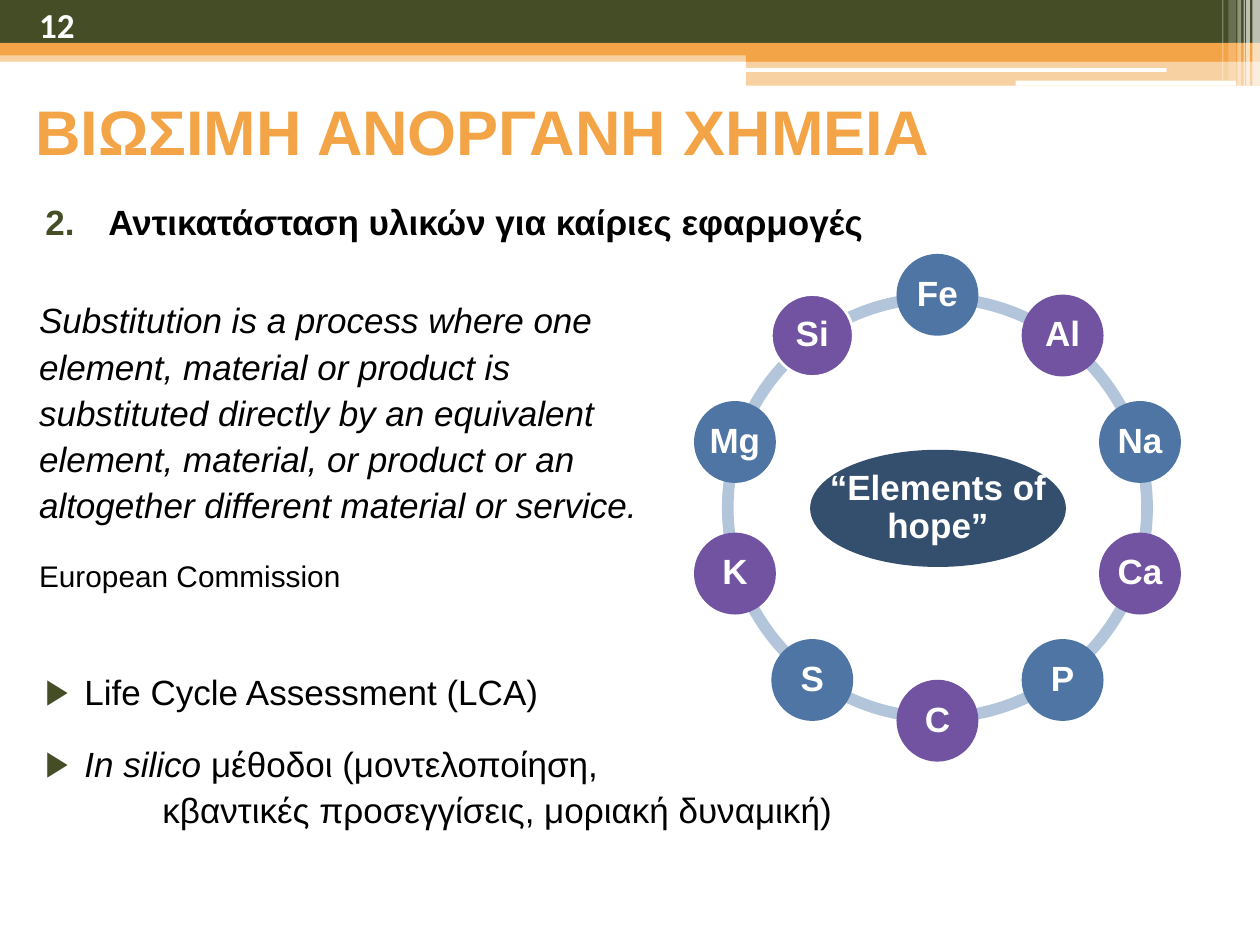
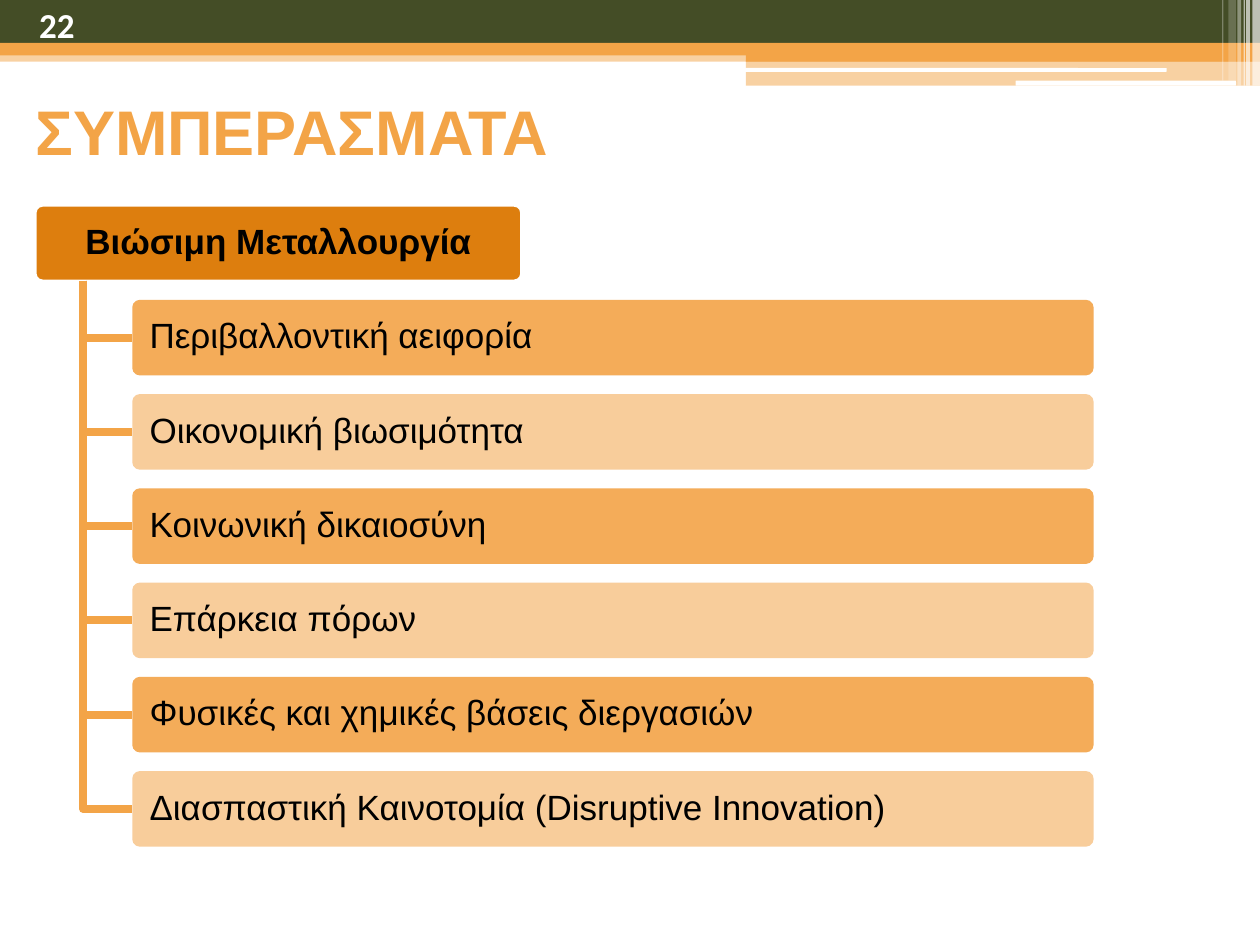
from math import cos, pi, sin

from lxml import etree
from pptx import Presentation
from pptx.dml.color import RGBColor
from pptx.enum import shapes, text
from pptx.oxml.ns import qn
from pptx.util import Inches, Pt

GREEN = RGBColor(0x44, 0x4D, 0x26)
ORANGE = RGBColor(0xF3, 0xA4, 0x47)
DARK_ORANGE = RGBColor(0xDD, 0x7E, 0x0E)
PALE_ORANGE = RGBColor(0xF8, 0xC8, 0x91)
WHITE = RGBColor(0xFF, 0xFF, 0xFF)
BLACK = RGBColor(0x00, 0x00, 0x00)
BLUE = RGBColor(0x4E, 0x75, 0xA3)
NAVY = RGBColor(0x34, 0x4E, 0x6D)
PURPLE = RGBColor(0x71, 0x53, 0xA1)
RING_BLUE = RGBColor(0xB3, 0xC5, 0xDA)

RECT = shapes.MSO_SHAPE.RECTANGLE
ROUND = shapes.MSO_SHAPE.ROUNDED_RECTANGLE
OVAL = shapes.MSO_SHAPE.OVAL
ARC = shapes.MSO_SHAPE.BLOCK_ARC
CENTER = text.PP_ALIGN.CENTER
LEFT = text.PP_ALIGN.LEFT
INSETS = (0.11, 0.06, 0.11, 0.06)

BAND = [
    (RECT, 0, 0.4, 10, 0.09, ORANGE, 50),
    (RECT, 0, 0, 10, 0.34, GREEN, 100),
    (RECT, 0, 0.34, 10, 0.1, ORANGE, 100),
    (RECT, 5.92, 0.39, 4.08, 0.1, ORANGE, 100),
    (RECT, 5.92, 0.48, 4.08, 0.2, ORANGE, 50),
    (ROUND, 5.91, 0.54, 3.35, 0.03, WHITE, 100),
    (ROUND, 8.06, 0.64, 1.75, 0.04, WHITE, 100),
    (RECT, 9.94, 0, 0.06, 0.68, WHITE, 65),
    (RECT, 9.89, 0, 0.03, 0.68, WHITE, 65),
    (RECT, 9.87, 0, 0.01, 0.68, WHITE, 60),
    (RECT, 9.82, 0, 0.03, 0.68, WHITE, 40),
    (RECT, 9.75, 0, 0.06, 0.64, WHITE, 20),
    (RECT, 9.7, 0, 0.01, 0.64, WHITE, 30),
]
ELEMENTS = ["Fe", "Al", "Na", "Ca", "P", "C", "S", "K", "Mg", "Si"]
GOALS = [
    "Περιβαλλοντική αειφορία",
    "Οικονομική βιωσιμότητα",
    "Κοινωνική δικαιοσύνη",
    "Επάρκεια πόρων",
    "Φυσικές και χημικές βάσεις διεργασιών",
    "Διασπαστική Καινοτομία (Disruptive Innovation)",
]


def add_bullet(para, kind, **attributes):
    props = para._p.get_or_add_pPr()
    color = etree.SubElement(props, qn("a:buClr"))
    etree.SubElement(color, qn("a:srgbClr"), val=str(GREEN))
    etree.SubElement(props, qn("a:buFont"), typeface="Arial")
    etree.SubElement(props, qn(kind), **attributes)


def write(box, content, size=20, color=BLACK, bold=False, italic=False, font="Arial",
          align=LEFT, spacing=1.0, before=0, margin=0, hang=0, bullet=None):
    frame = box.text_frame
    para = frame.add_paragraph() if frame.text else frame.paragraphs[0]
    if bullet:
        add_bullet(para, bullet[0], **bullet[1])
    para.alignment, para.line_spacing, para.space_before = align, spacing, Pt(before)
    props = para._p.get_or_add_pPr()
    props.set("marL", str(Inches(margin)))
    props.set("indent", str(Inches(-hang)))
    spans = [(content, italic)] if isinstance(content, str) else content
    for words, slanted in spans:
        for index, line in enumerate(words.split("\n")):
            if index:
                para.add_line_break()
            span = para.add_run()
            span.text = line
            span.font.size, span.font.name = Pt(size), font
            span.font.bold, span.font.italic = bold, slanted
            span.font.color.rgb = color


class Sheet:
    """Holds the deck style and draws each kind of element on the current page."""

    def __init__(self):
        self.deck = Presentation()
        self.deck.slide_width, self.deck.slide_height = Inches(10), Inches(7.5)
        self.layout = self.deck.slide_layouts[5]
        self.page = None

    def start(self, title, number):
        self.page = self.deck.slides.add_slide(self.layout)
        if number == 12:
            self.band()
        box = self.page.shapes.title
        box.left, box.top, box.width, box.height = map(Inches, (0.17, 0.68, 9, 0.71))
        self.frame(box, INSETS, text.MSO_ANCHOR.MIDDLE)
        write(box, title, size=36, color=ORANGE, bold=True)
        box = self.textbox(0.2, -0.03, 0.71, 0.45)
        write(box, str(number), color=WHITE, bold=True, font="Calibri")

    def band(self):
        for index, (kind, left, top, width, height, color, opacity) in enumerate(BAND):
            stripe = self.shape(kind, left, top, width, height, color, opacity)
            stripe.element.nvSpPr.cNvPr.set("id", str(100 + index))
            self.layout.shapes.element.insert(2 + index, stripe.element)

    def frame(self, box, insets, anchor, wrap=True):
        frame = box.text_frame
        frame.word_wrap, frame.vertical_anchor = wrap, anchor
        frame.auto_size = text.MSO_AUTO_SIZE.NONE
        (frame.margin_left, frame.margin_top,
         frame.margin_right, frame.margin_bottom) = map(Inches, insets)

    def textbox(self, left, top, width, height):
        box = self.page.shapes.add_textbox(*map(Inches, (left, top, width, height)))
        self.frame(box, INSETS, text.MSO_ANCHOR.TOP)
        return box

    def shape(self, kind, left, top, width, height, color, opacity=100, outline=None, adjust=()):
        shape = self.page.shapes.add_shape(kind, *map(Inches, (left, top, width, height)))
        shape.shadow.inherit = False
        shape.fill.solid()
        shape.fill.fore_color.rgb = color
        if opacity < 100:
            tint = shape.element.spPr.find(".//" + qn("a:srgbClr"))
            etree.SubElement(tint, qn("a:alpha"), val=str(opacity * 1000))
        if outline is None:
            shape.line.fill.background()
        else:
            shape.line.color.rgb, shape.line.width = outline, Pt(1.5)
        for index, value in enumerate(adjust):
            shape.adjustments[index] = value
        return shape

    def label(self, shape, words, inset=0.03, wrap=False, **style):
        self.frame(shape, (inset, 0.03, 0.03, 0.03), text.MSO_ANCHOR.MIDDLE, wrap)
        write(shape, words, spacing=0.9, **style)

    def elbow(self, left, top, right, bottom):
        builder = self.page.shapes.build_freeform(Inches(left), Inches(top))
        corners = [(left, bottom), (right, bottom)]
        builder.add_line_segments([(Inches(x), Inches(y)) for x, y in corners], close=False)
        line = builder.convert_to_shape()
        line.shadow.inherit = False
        line.fill.background()
        line.line.color.rgb, line.line.width = ORANGE, Pt(4.5)


def draw_element_ring(sheet):
    left, top, size = 5.73, 2.32, 3.42
    center_x, center_y = left + size / 2, top + size / 2
    radius, circle = 1.69, 0.65
    full_turn = 216
    step = full_turn / len(ELEMENTS)
    for index in range(len(ELEMENTS)):
        end = (162 - step * index) % full_turn
        start = (end - step) % full_turn
        sheet.shape(ARC, left, top, size, size, RING_BLUE, adjust=(start, end, 0.027))
    style = dict(color=WHITE, bold=True, align=CENTER)
    hub = sheet.shape(OVAL, 6.43, 3.57, 2.03, 0.93, NAVY)
    sheet.label(hub, "“Elements of\nhope”", **style)
    for index, symbol in enumerate(ELEMENTS):
        angle = 2 * pi * index / len(ELEMENTS)
        x = center_x + radius * sin(angle) - circle / 2
        y = center_y - radius * cos(angle) - circle / 2
        node = sheet.shape(OVAL, x, y, circle, circle, PURPLE if index % 2 else BLUE,
                           outline=WHITE if symbol == "Si" else None)
        sheet.label(node, symbol, **style)


def build_substitution(sheet):
    sheet.start("ΒΙΩΣΙΜΗ ΑΝΟΡΓΑΝΗ ΧΗΜΕΙΑ", 12)
    body = sheet.textbox(0.12, 1.5, 9.6, 5.48)
    write(body, "Αντικατάσταση υλικών για καίριες εφαρμογές", bold=True, spacing=1.1,
          margin=0.63, hang=0.5, bullet=("a:buAutoNum", dict(type="arabicPeriod", startAt="2")))
    item = dict(spacing=1.1, margin=0.44, hang=0.31, bullet=("a:buChar", dict(char="▶")))
    write(body, "Life Cycle Assessment (LCA)", before=242, **item)
    write(body, [("In silico ", True), ("μέθοδοι (μοντελοποίηση,", False)], before=14.7, **item)
    write(body, "κβαντικές προσεγγίσεις, μοριακή δυναμική)", spacing=1.1, margin=1.06)
    quote = sheet.textbox(0.2, 2.28, 5.12, 2.49)
    write(quote, "Substitution is a process where one element, material or product is "
          "substituted directly by an equivalent element, material, or product or an "
          "altogether different material or service.", italic=True, spacing=1.1)
    write(quote, "European Commission", size=17, spacing=1.1, before=16)
    draw_element_ring(sheet)


def build_conclusions(sheet):
    sheet.start("ΣΥΜΠΕΡΑΣΜΑΤΑ", 22)
    head = sheet.shape(ROUND, 0.28, 1.63, 3.86, 0.6, DARK_ORANGE, outline=WHITE, adjust=(0.1,))
    sheet.label(head, "Βιώσιμη Μεταλλουργία", wrap=True, bold=True, align=CENTER)
    for index, goal in enumerate(GOALS):
        top = 2.38 + 0.748 * index
        sheet.elbow(0.66, 2.23, 1.05, top + 0.3)
        box = sheet.shape(ROUND, 1.05, top, 7.63, 0.6,
                          PALE_ORANGE if index % 2 else ORANGE, 90, adjust=(0.1,))
        sheet.label(box, goal, inset=0.12, wrap=True)


def main():
    sheet = Sheet()
    build_substitution(sheet)
    build_conclusions(sheet)
    sheet.deck.save("out.pptx")


if __name__ == "__main__":
    main()
